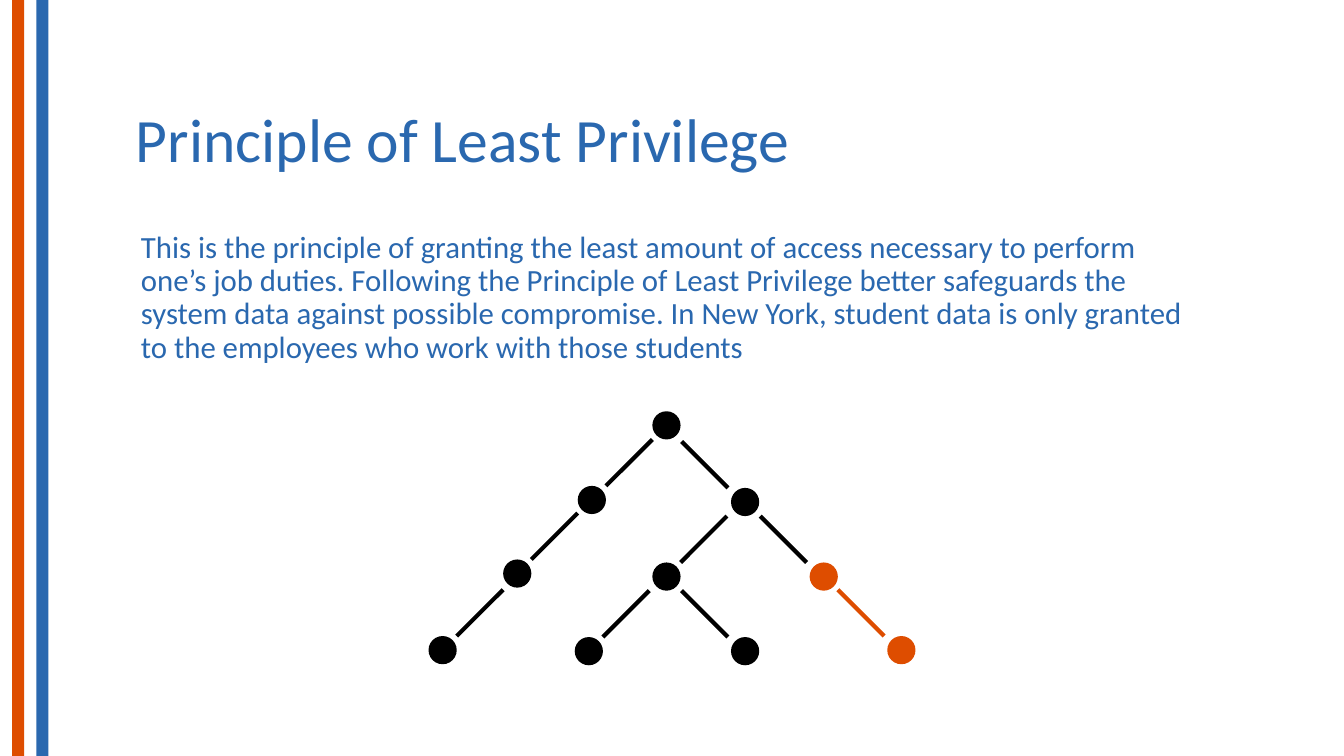
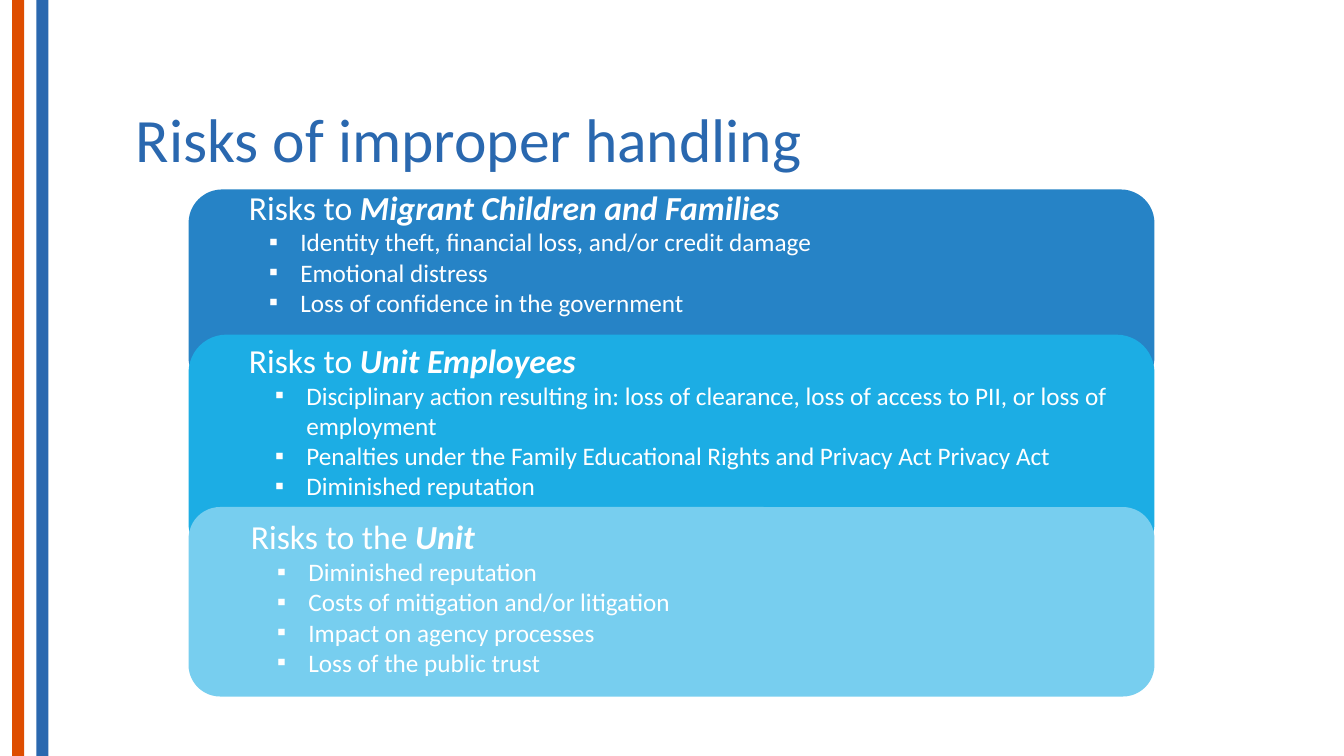
from dataclasses import dataclass

from lxml import etree
from pptx import Presentation
from pptx.dml import color
from pptx.enum import shapes, text
from pptx.oxml import ns
from pptx.util import Inches, Pt


@dataclass(frozen=True)
class Theme:
    font: str = "Calibri"
    orange: str = "DE4D00"
    blue: str = "2A68AF"
    black: str = "000000"
    white: str = "FFFFFF"
    card_fills: tuple = ("2683C6", "1CADE4", "77CEEF")
    title: int = 44
    body: int = 22
    heading: int = 24
    bullet: int = 18
    line: int = 3


THEME = Theme()
WIDTH, HEIGHT = 13.33, 7.5
STRIPE = 0.12
CONTENT_X, CONTENT_W = 1.25, 10.8

DOT = 0.28
BRANCH = 0.46
BRANCH_GAP = 0.03
ROOT, LEFT, RIGHT = 0, 1, -1
TREE = [
    (6.47, 4.08, ROOT, THEME.black, THEME.black),
    (5.73, 4.82, LEFT, THEME.black, THEME.black),
    (7.25, 4.84, RIGHT, THEME.black, THEME.black),
    (4.99, 5.55, LEFT, THEME.black, THEME.black),
    (6.47, 5.58, LEFT, THEME.black, THEME.black),
    (8.03, 5.58, RIGHT, THEME.orange, THEME.black),
    (4.25, 6.31, LEFT, THEME.black, THEME.black),
    (5.7, 6.32, LEFT, THEME.black, THEME.black),
    (7.25, 6.32, RIGHT, THEME.black, THEME.black),
    (8.8, 6.31, RIGHT, THEME.orange, THEME.orange),
]

PRINCIPLE = (
    "This is the principle of granting the least amount of access necessary to "
    "perform one’s job duties. Following the Principle of Least Privilege better "
    "safeguards the system data against possible compromise. In New York, student "
    "data is only granted to the employees who work with those students"
)

CARD_X, CARD_W = 1.87, 9.58
HANGING = 0.31
CARDS = [
    {
        "top": 1.88, "height": 2, "text_box": (2.37, 1.8, 7.58, 1.72), "indent": 0.51,
        "heading": ("Risks to ", "Migrant Children and Families"),
        "bullets": [
            "Identity theft, financial loss, and/or credit damage",
            "Emotional distress",
            "Loss of confidence in the government",
        ],
    },
    {
        "top": 3.32, "height": 2.25, "text_box": (2.37, 3.32, 9.1, 2.02), "indent": 0.57,
        "heading": ("Risks to ", "Unit Employees"),
        "bullets": [
            "Disciplinary action resulting in: loss of clearance, "
            "loss of access to PII, or loss of employment",
            "Penalties under the Family Educational Rights and Privacy Act Privacy Act",
            "Diminished reputation",
        ],
    },
    {
        "top": 5.03, "height": 1.88, "text_box": (2.39, 5.07, 7.58, 2.01), "indent": 0.57,
        "heading": ("Risks to the ", "Unit"),
        "bullets": [
            "Diminished reputation",
            "Costs of mitigation and/or litigation",
            "Impact on agency processes",
            "Loss of the public trust",
        ],
    },
]


def rgb(value):
    return color.RGBColor.from_string(value)


def apply(target, **values):
    for name, value in values.items():
        setattr(target, name, value)


def add_shape(s, kind, box, fill):
    sp = s.shapes.add_shape(kind, *map(Inches, box))
    sp.shadow.inherit = False
    sp.fill.solid()
    sp.fill.fore_color.rgb = rgb(fill)
    sp.line.fill.background()
    return sp


def add_line(s, start, end, ink):
    line = s.shapes.add_connector(
        shapes.MSO_CONNECTOR.STRAIGHT, *map(Inches, (*start, *end)))
    line.line.width = Pt(THEME.line)
    line.line.color.rgb = rgb(ink)
    etree.SubElement(line.element.spPr, ns.qn("a:effectLst"))


def add_text_frame(s, box, **values):
    tf = s.shapes.add_textbox(*map(Inches, box)).text_frame
    apply(tf, word_wrap=True, **values)
    return tf


def add_run(p, words, size, ink, **values):
    r = p.add_run()
    r.text = words
    apply(r.font, name=THEME.font, size=Pt(size), **values)
    r.font.color.rgb = rgb(ink)


def set_indent(p, left, first=0):
    props = p._p.get_or_add_pPr()
    props.set("marL", str(Inches(left)))
    props.set("indent", str(Inches(first)))
    return props


def add_bullet(tf, words, indent):
    p = tf.add_paragraph()
    props = set_indent(p, indent, -HANGING)
    bullet_color = etree.SubElement(props, ns.qn("a:buClr"))
    etree.SubElement(bullet_color, ns.qn("a:srgbClr"), val=THEME.white)
    etree.SubElement(props, ns.qn("a:buFont"), typeface=THEME.font)
    etree.SubElement(props, ns.qn("a:buChar"), char="▪")
    add_run(p, words, THEME.bullet, THEME.white)


def add_slide(prs, title):
    s = prs.slides.add_slide(prs.slide_layouts[6])
    for x, fill in ((STRIPE, THEME.orange), (3 * STRIPE, THEME.blue)):
        add_shape(s, shapes.MSO_SHAPE.RECTANGLE, (x, 0, STRIPE, HEIGHT), fill)
    tf = add_text_frame(s, (CONTENT_X, 0.67, CONTENT_W, 1.48),
                        vertical_anchor=text.MSO_ANCHOR.MIDDLE)
    p = tf.paragraphs[0]
    p.line_spacing = 0.9
    add_run(p, title, THEME.title, THEME.blue)
    return s


def add_body(s, words):
    p = add_text_frame(s, (CONTENT_X, 2.25, CONTENT_W, 1.6)).paragraphs[0]
    p.line_spacing = 0.9
    set_indent(p, 0.05)
    add_run(p, words, THEME.body, THEME.blue)


def add_node(s, x, y, side, fill, branch_ink):
    add_shape(s, shapes.MSO_SHAPE.OVAL, (x, y, DOT, DOT), fill)
    if side != ROOT:
        start_x = x + DOT if side == LEFT else x - BRANCH_GAP
        add_line(s, (start_x, y), (start_x + side * BRANCH, y - BRANCH), branch_ink)


def add_card(s, card, fill):
    add_shape(s, shapes.MSO_SHAPE.ROUNDED_RECTANGLE,
              (CARD_X, card["top"], CARD_W, card["height"]), fill)
    tf = add_text_frame(s, card["text_box"],
                        auto_size=text.MSO_AUTO_SIZE.SHAPE_TO_FIT_TEXT)
    lead, subject = card["heading"]
    p = tf.paragraphs[0]
    add_run(p, lead, THEME.heading, THEME.white)
    add_run(p, subject, THEME.heading, THEME.white, bold=True, italic=True)
    for words in card["bullets"]:
        add_bullet(tf, words, card["indent"])


def main():
    prs = Presentation()
    apply(prs, slide_width=Inches(WIDTH), slide_height=Inches(HEIGHT))

    s = add_slide(prs, "Principle of Least Privilege")
    add_body(s, PRINCIPLE)
    for node in TREE:
        add_node(s, *node)

    s = add_slide(prs, "Risks of improper handling")
    for card, fill in zip(CARDS, THEME.card_fills):
        add_card(s, card, fill)

    prs.save("out.pptx")


if __name__ == "__main__":
    main()
